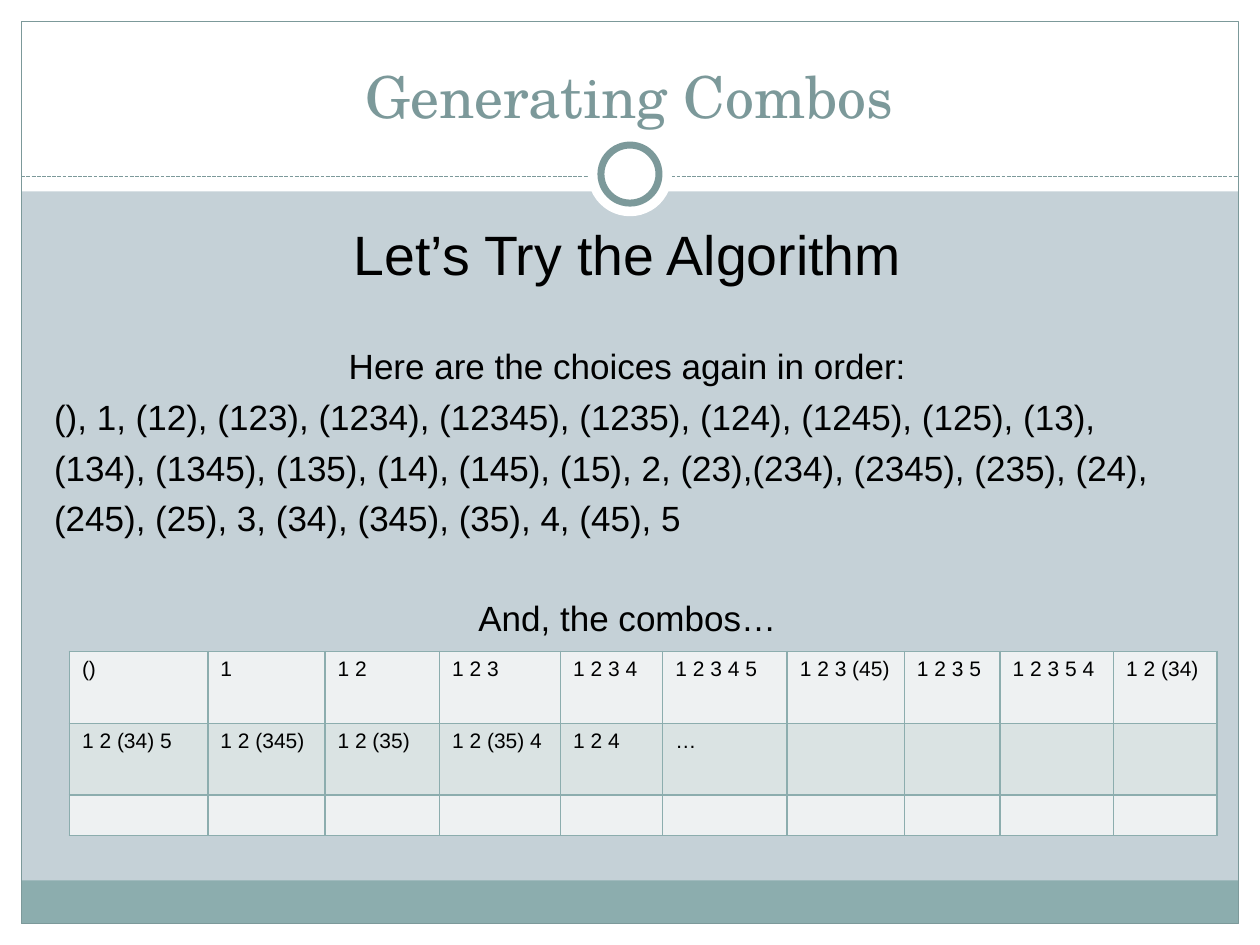
import pptx
import pptx.util
import pptx.dml.color
import pptx.enum.dml
import pptx.enum.shapes
import pptx.enum.text
import pptx.oxml.ns
from lxml import etree

Cm, Pt = pptx.util.Cm, pptx.util.Pt
SHAPE = pptx.enum.shapes.MSO_SHAPE
ALIGN = pptx.enum.text.PP_ALIGN
ANCHOR = pptx.enum.text.MSO_ANCHOR
qn = pptx.oxml.ns.qn

COLORS = {"bg": "C5D1D7", "white": "FFFFFF", "bar": "8CADAE", "accent": "7C999A",
          "text": "000000", "row_odd": "EEF1F2", "row_even": "DAE3E3"}
W, H, EDGE = 25.4, 19.05, 0.43


def rgb(name):
    return pptx.dml.color.RGBColor.from_string(COLORS[name])


def apply(obj, values):
    for name, value in values.items():
        setattr(obj, name, value)


class SlideBuilder:
    """Holds the text style and the current slide."""

    def __init__(self, slide, font="Arial"):
        self.s = slide
        self.font = font

    def background(self, color):
        fill = self.s.background.fill
        fill.solid()
        fill.fore_color.rgb = rgb(color)

    def shape(self, kind, x, y, w, h, fill=None, line=None, width=0.75):
        sp = self.s.shapes.add_shape(kind, Cm(x), Cm(y), Cm(w), Cm(h))
        sp.shadow.inherit = False
        if fill:
            sp.fill.solid()
            sp.fill.fore_color.rgb = rgb(fill)
        else:
            sp.fill.background()
        if line:
            sp.line.color.rgb = rgb(line)
            sp.line.width = Pt(width)
        else:
            sp.line.fill.background()

    def circle(self, cx, cy, d, **style):
        self.shape(SHAPE.OVAL, cx - d / 2, cy - d / 2, d, d, **style)

    def dashed_line(self, x1, x2, y, color):
        cn = self.s.shapes.add_connector(pptx.enum.shapes.MSO_CONNECTOR.STRAIGHT,
                                         Cm(x1), Cm(y), Cm(x2), Cm(y))
        cn.line.color.rgb = rgb(color)
        apply(cn.line, {"width": Pt(0.75),
                        "dash_style": pptx.enum.dml.MSO_LINE.SQUARE_DOT})
        etree.SubElement(cn._element.spPr, qn("a:effectLst"))

    def run(self, p, text, size, color="text", font=None):
        r = p.add_run()
        r.text = text
        apply(r.font, {"size": Pt(size), "name": font or self.font})
        r.font.color.rgb = rgb(color)

    def text(self, x, y, w, h, paragraphs, top=0.13, anchor=ANCHOR.TOP, **style):
        """Each paragraph is (text, size, alignment, space before)."""
        tf = self.s.shapes.add_textbox(Cm(x), Cm(y), Cm(w), Cm(h)).text_frame
        apply(tf, {"word_wrap": True, "vertical_anchor": anchor, "margin_top": Cm(top)})
        for i, (text, size, align, before) in enumerate(paragraphs):
            p = tf.add_paragraph() if i else tf.paragraphs[0]
            apply(p, {"alignment": align, "space_before": Pt(before)})
            self.run(p, text, size, **style)

    def cell_border(self, cell, color):
        tcPr = cell._tc.get_or_add_tcPr()
        for i, side in enumerate(("lnL", "lnR", "lnT", "lnB")):
            ln = etree.Element(qn("a:" + side), w=str(Pt(1)))
            fill = etree.SubElement(ln, qn("a:solidFill"))
            etree.SubElement(fill, qn("a:srgbClr"), val=COLORS[color])
            tcPr.insert(i, ln)

    def table(self, x, y, widths, heights, rows, size):
        tbl = self.s.shapes.add_table(len(heights), len(widths), Cm(x), Cm(y),
                                      Cm(sum(widths)), Cm(sum(heights))).table
        for col, width in zip(tbl.columns, widths):
            col.width = Cm(width)
        for i, height in enumerate(heights):
            tbl.rows[i].height = Cm(height)
            for j in range(len(widths)):
                cell = tbl.cell(i, j)
                cell.fill.solid()
                cell.fill.fore_color.rgb = rgb("row_even" if i % 2 else "row_odd")
                self.cell_border(cell, "bar")
                p = cell.text_frame.paragraphs[0]
                if j < len(rows[i]):
                    self.run(p, rows[i][j], size)
                else:  # keeps empty rows low
                    etree.SubElement(p._p, qn("a:endParaRPr"), sz=str(size * 100))


def main():
    prs = pptx.Presentation()
    apply(prs, {"slide_width": Cm(W), "slide_height": Cm(H)})
    b = SlideBuilder(prs.slides.add_slide(prs.slide_layouts[6]))

    # White margins, header and footer bar
    b.background("bg")
    for area in ((0, H - EDGE, W, EDGE), (0, 0, W, 3.86),
                 (0, 0, EDGE, H), (W - EDGE, 0, EDGE, H)):
        b.shape(SHAPE.RECTANGLE, *area, fill="white")
    inner = W - 2 * EDGE
    b.shape(SHAPE.RECTANGLE, EDGE, 17.75, inner, 0.87, fill="bar")
    b.shape(SHAPE.RECTANGLE, EDGE, EDGE, inner, H - 2 * EDGE, line="accent")

    # Divider with ring
    b.dashed_line(EDGE, W - EDGE, 3.56, "accent")
    b.circle(W / 2, 3.51, 1.7, fill="white")
    b.circle(W / 2, 3.51, 1.17, fill="white", line="accent", width=4)

    # Title
    b.text(0.84, 0.64, 23.7, 2.11, [("Generating Combos", 33, ALIGN.CENTER, 0)],
           anchor=ANCHOR.BOTTOM, color="accent", font="TeX Gyre Schola")

    # Body
    b.text(0.84, 4.24, 23.62, 8.8, [
        ("Let’s Try the Algorithm", 31.7, ALIGN.CENTER, 0),
        ("Here are the choices again in order:", 20, ALIGN.CENTER, 33),
        ("(), 1, (12), (123), (1234), (12345), (1235), (124), (1245), (125), (13),",
         20, ALIGN.LEFT, 5),
        ("(134), (1345), (135), (14), (145), (15), 2, (23),(234), (2345), (235), (24),",
         20, ALIGN.LEFT, 5),
        ("(245), (25), 3, (34), (345), (35), 4, (45), 5", 20, ALIGN.LEFT, 5),
        ("And, the combos…", 20, ALIGN.CENTER, 33),
    ], top=0.2)

    # Combos
    b.table(1.4, 13.13,
            [2.79, 2.36, 2.31, 2.44, 2.06, 2.51, 2.36, 1.93, 2.29, 2.08],
            [1.45, 1.45, 0.81],
            [["()", "1", "1 2", "1 2 3", "1 2 3 4", "1 2 3 4 5", "1 2 3 (45)",
              "1 2 3 5", "1 2 3 5 4", "1 2 (34)"],
             ["1 2 (34) 5", "1 2 (345)", "1 2 (35)", "1 2 (35) 4", "1 2 4", "…"],
             []], 12)

    prs.save("out.pptx")


if __name__ == "__main__":
    main()
